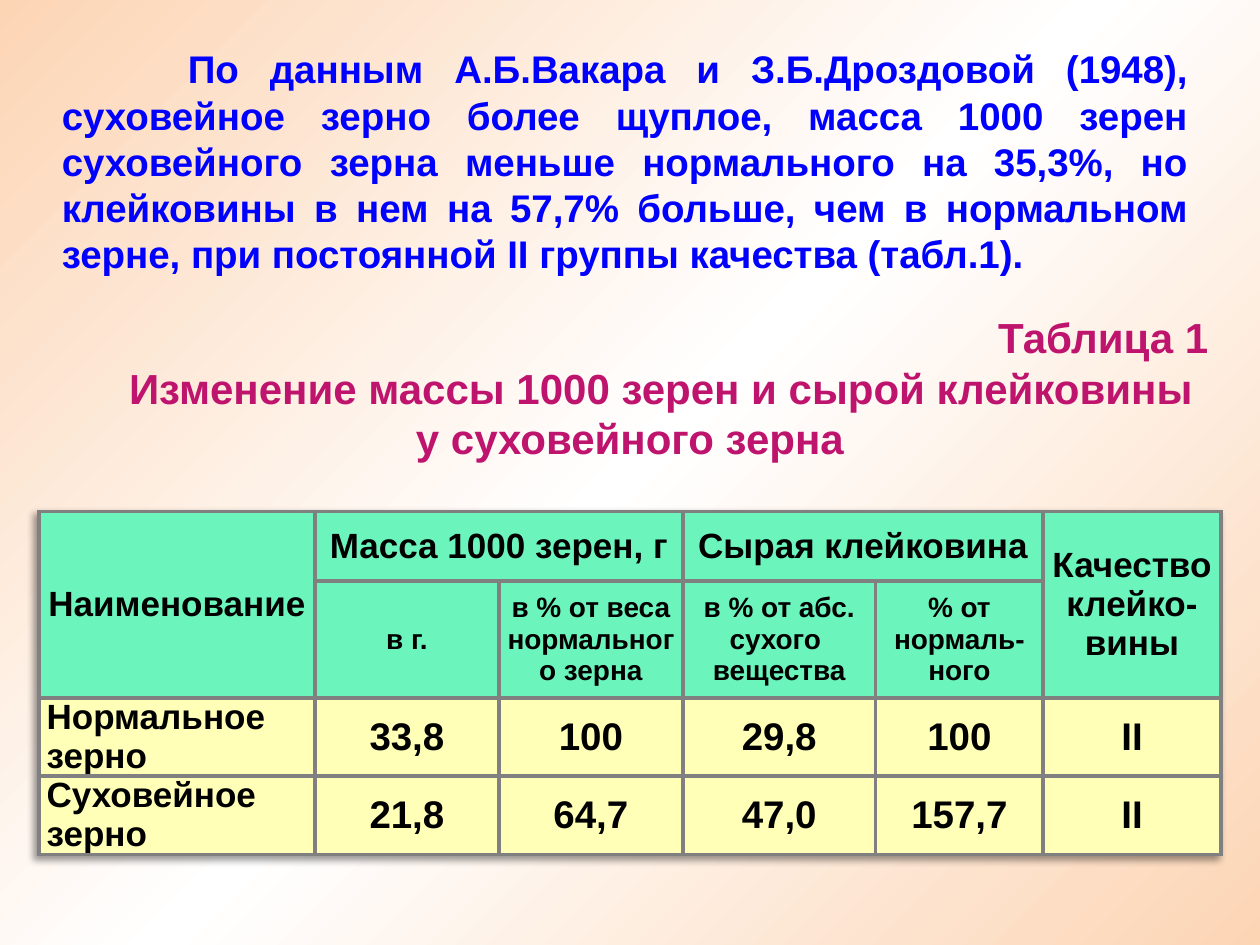
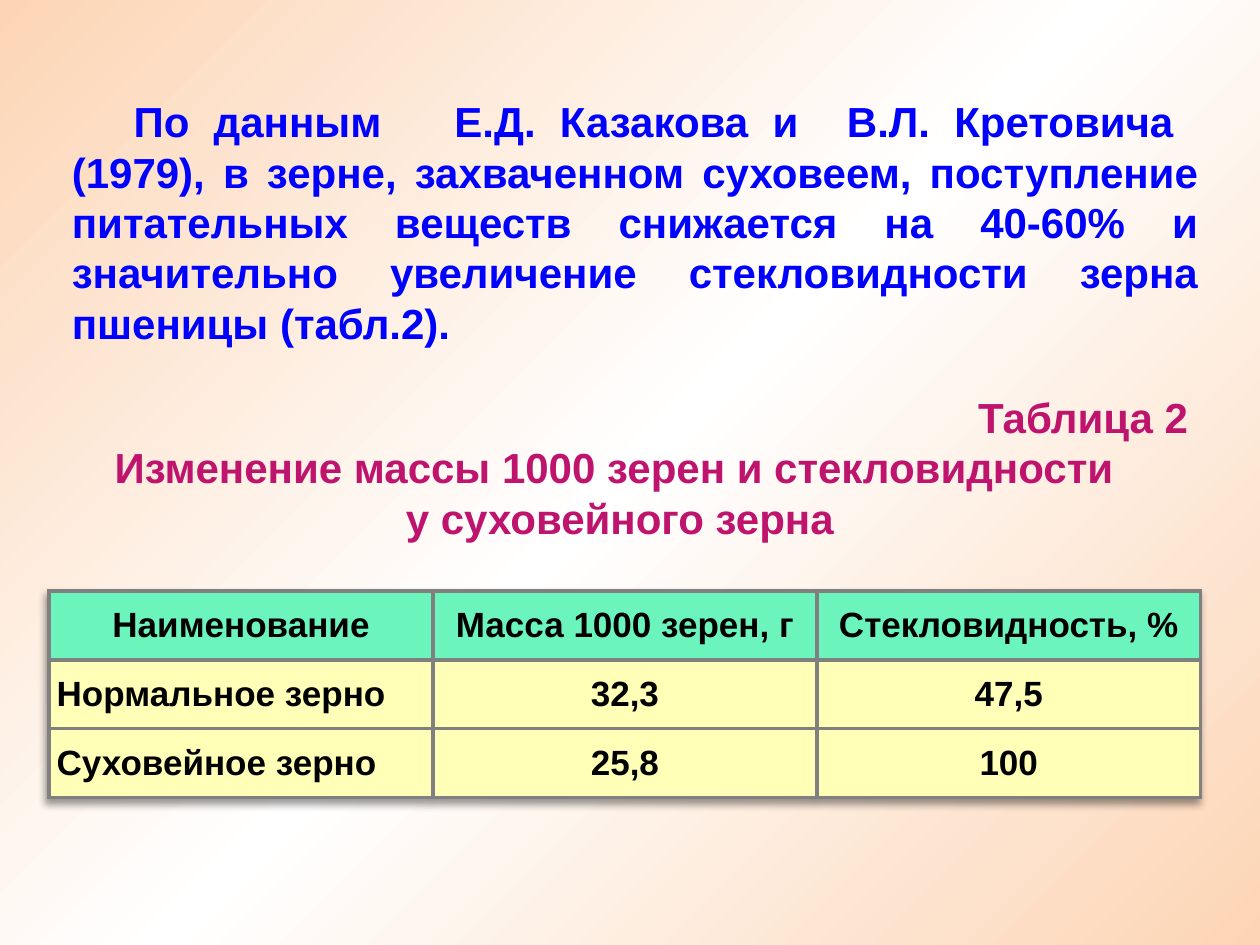
import pptx
import pptx.util
import pptx.oxml
import pptx.oxml.ns
import pptx.dml.color
import pptx.enum.text

ALIGN = pptx.enum.text.PP_ALIGN
ANCHOR = pptx.enum.text.MSO_ANCHOR
COLORS = {
    "peach": "FCD5B5",
    "white": "FFFFFF",
    "body": "0000FF",
    "caption": "BE146D",
    "cell_text": "000000",
    "header": "6CF4BD",
    "data": "FFFFB7",
    "border": "808080",
}
FONT = "Arial"
COLUMNS, ROWS = 100, 75
NAMESPACE = pptx.oxml.ns.nsdecls("a")


def rgb(name):
    return pptx.dml.color.RGBColor.from_string(COLORS[name])


def write_text(paragraph, text, size=20, color="cell_text", align=ALIGN.CENTER,
               indent=0, spacing=None):
    run = paragraph.add_run()
    run.text = text
    run.font.name = FONT
    run.font.size = pptx.util.Pt(size)
    run.font.bold = True
    run.font.color.rgb = rgb(color)
    paragraph.alignment = align
    if spacing:
        paragraph.line_spacing = spacing
        paragraph.space_before = pptx.util.Pt(0)
        properties = paragraph._p.get_or_add_pPr()
        properties.set("marL", "0")
        properties.set("indent", str(indent))
        properties.append(pptx.oxml.parse_xml(f"<a:buNone {NAMESPACE}/>"))


class Deck:
    def __init__(self):
        self.presentation = pptx.Presentation()
        self.presentation.slide_width = pptx.util.Inches(10)
        self.presentation.slide_height = pptx.util.Inches(7.5)
        self.slide = None
        self.paint_background()

    def x(self, columns):
        return round(self.presentation.slide_width * columns / COLUMNS)

    def y(self, rows):
        return round(self.presentation.slide_height * rows / ROWS)

    def box(self, left, top, width, height):
        return self.x(left), self.y(top), self.x(width), self.y(height)

    def paint_background(self):
        master = self.presentation.slide_master
        master.background.fill.solid()
        properties = master.element.find(".//" + pptx.oxml.ns.qn("p:bgPr"))
        stops = "".join(
            f'<a:gs pos="{position}"><a:srgbClr val="{COLORS[name]}"/></a:gs>'
            for position, name in ((0, "peach"), (50000, "white"), (100000, "peach")))
        gradient = pptx.oxml.parse_xml(
            f'<a:gradFill {NAMESPACE} rotWithShape="1"><a:gsLst>{stops}</a:gsLst>'
            '<a:lin ang="2700000" scaled="0"/></a:gradFill>')
        properties.replace(properties[0], gradient)

    def add_slide(self):
        layout = self.presentation.slide_layouts[1]
        self.slide = self.presentation.slides.add_slide(layout)

    def place(self, shape, box, anchor):
        shape.left, shape.top, shape.width, shape.height = self.box(*box)
        frame = shape.text_frame
        frame.word_wrap = True
        frame.auto_size = pptx.enum.text.MSO_AUTO_SIZE.NONE
        frame.vertical_anchor = anchor
        return frame

    def body(self, text, box, size, indent, anchor=ANCHOR.TOP):
        frame = self.place(self.slide.placeholders[1], box, anchor)
        write_text(frame.paragraphs[0], text, size=size, color="body",
                   align=ALIGN.JUSTIFY, indent=self.x(indent), spacing=1.0)

    def caption(self, number, lines, box, indent=0):
        frame = self.place(self.slide.shapes.title, box, ANCHOR.MIDDLE)
        style = dict(size=24, color="caption", indent=self.x(indent), spacing=1.0)
        write_text(frame.paragraphs[0], number, align=ALIGN.RIGHT, **style)
        for line in lines:
            write_text(frame.add_paragraph(), line, **style)

    def table(self, rows, box, widths, heights, header_rows=1, merges=(),
              sizes=None, label_anchor=ANCHOR.MIDDLE):
        shape = self.slide.shapes.add_table(len(rows), len(widths), *self.box(*box))
        table = shape.table
        table.first_row = table.horz_banding = False
        self.add_shadow(table)
        for column, width in zip(table.columns, widths):
            column.width = self.x(width)
        for row, height in zip(table.rows, heights):
            row.height = self.y(height)
        for row_index, texts in enumerate(rows):
            is_header = row_index < header_rows
            for column_index, text in enumerate(texts):
                cell = table.cell(row_index, column_index)
                is_label = column_index == 0 and not is_header
                self.format_cell(cell, "header" if is_header else "data")
                if is_label:
                    cell.vertical_anchor = label_anchor
                size = sizes[row_index] if sizes and not is_label else 20
                if text:
                    self.fill_cell(cell, text, size, ALIGN.LEFT if is_label else ALIGN.CENTER)
        for first, last in merges:
            table.cell(*first).merge(table.cell(*last))

    def fill_cell(self, cell, text, size, align):
        frame = cell.text_frame
        for index, line in enumerate(text.split("\n")):
            paragraph = frame.add_paragraph() if index else frame.paragraphs[0]
            write_text(paragraph, line, size=size, align=align)

    def format_cell(self, cell, color):
        cell.margin_left = cell.margin_right = self.x(0.6)
        cell.margin_top = cell.margin_bottom = 0
        cell.vertical_anchor = ANCHOR.MIDDLE
        properties = cell._tc.get_or_add_tcPr()
        for side in "LRTB":
            properties.append(pptx.oxml.parse_xml(
                f'<a:ln{side} {NAMESPACE} w="{pptx.util.Pt(2.25)}"><a:solidFill>'
                f'<a:srgbClr val="{COLORS["border"]}"/></a:solidFill></a:ln{side}>'))
        cell.fill.solid()
        cell.fill.fore_color.rgb = rgb(color)

    def add_shadow(self, table):
        table._tbl.tblPr.insert(0, pptx.oxml.parse_xml(
            f'<a:effectLst {NAMESPACE}><a:outerShdw blurRad="50800" dist="38100" '
            'dir="8100000" algn="tr" rotWithShape="0"><a:srgbClr val="000000">'
            '<a:alpha val="40000"/></a:srgbClr></a:outerShdw></a:effectLst>'))


def build_gluten_slide(deck):
    deck.add_slide()
    deck.body(
        "По данным А.Б.Вакара и З.Б.Дроздовой (1948), суховейное зерно более щуплое, "
        "масса 1000 зерен суховейного зерна меньше нормального на 35,3%, но клейковины "
        "в нем на 57,7% больше, чем в нормальном зерне, при постоянной II группы "
        "качества (табл.1).",
        (3.9, 3.1, 91.4, 19.5), size=22, indent=10)
    deck.caption(
        "Таблица 1",
        ["Изменение массы 1000 зерен и сырой клейковины у суховейного зерна"],
        (3.1, 24.2, 93.8, 13.1), indent=4.9)
    deck.table(
        [["Наименование", "Масса 1000 зерен, г", "", "Сырая клейковина", "",
          "Качество клейко-вины"],
         ["", "в г.", "в % от веса нормального зерна",
          "в % от абс. сухого \nвещества", "% от нормаль-ного", ""],
         ["Нормальное зерно", "33,8", "100", "29,8", "100", "II"],
         ["Суховейное зерно", "21,8", "64,7", "47,0", "157,7", "II"]],
        (3.1, 40.6, 93.8, 27.2),
        widths=[21.9, 14.6, 14.6, 15.3, 13.3, 14.1],
        heights=[5.5, 9.3, 6.2, 6.2],
        header_rows=2,
        merges=[((0, 0), (1, 0)), ((0, 1), (0, 2)), ((0, 3), (0, 4)), ((0, 5), (1, 5))],
        sizes=[20, 16, 22, 22],
        label_anchor=ANCHOR.TOP)


def build_vitreousness_slide(deck):
    deck.add_slide()
    deck.body(
        "По данным   Е.Д. Казакова и  В.Л. Кретовича  (1979), в зерне, захваченном "
        "суховеем, поступление питательных веществ снижается на 40-60% и значительно "
        "увеличение стекловидности зерна пшеницы (табл.2).",
        (4.7, 7, 91.4, 21.2), size=24, indent=4.9, anchor=ANCHOR.MIDDLE)
    deck.caption(
        "Таблица 2",
        ["Изменение массы 1000 зерен и стекловидности ", "у суховейного зерна"],
        (3.1, 30.5, 92.2, 13.1))
    deck.table(
        [["Наименование", "Масса 1000 зерен, г", "Стекловидность, %"],
         ["Нормальное зерно", "32,3", "47,5"],
         ["Суховейное зерно", "25,8", "100"]],
        (3.9, 46.9, 91.4, 16.4), widths=[91.4 / 3] * 3, heights=[16.4 / 3] * 3)


def main():
    deck = Deck()
    build_gluten_slide(deck)
    build_vitreousness_slide(deck)
    deck.presentation.save("out.pptx")


if __name__ == "__main__":
    main()
